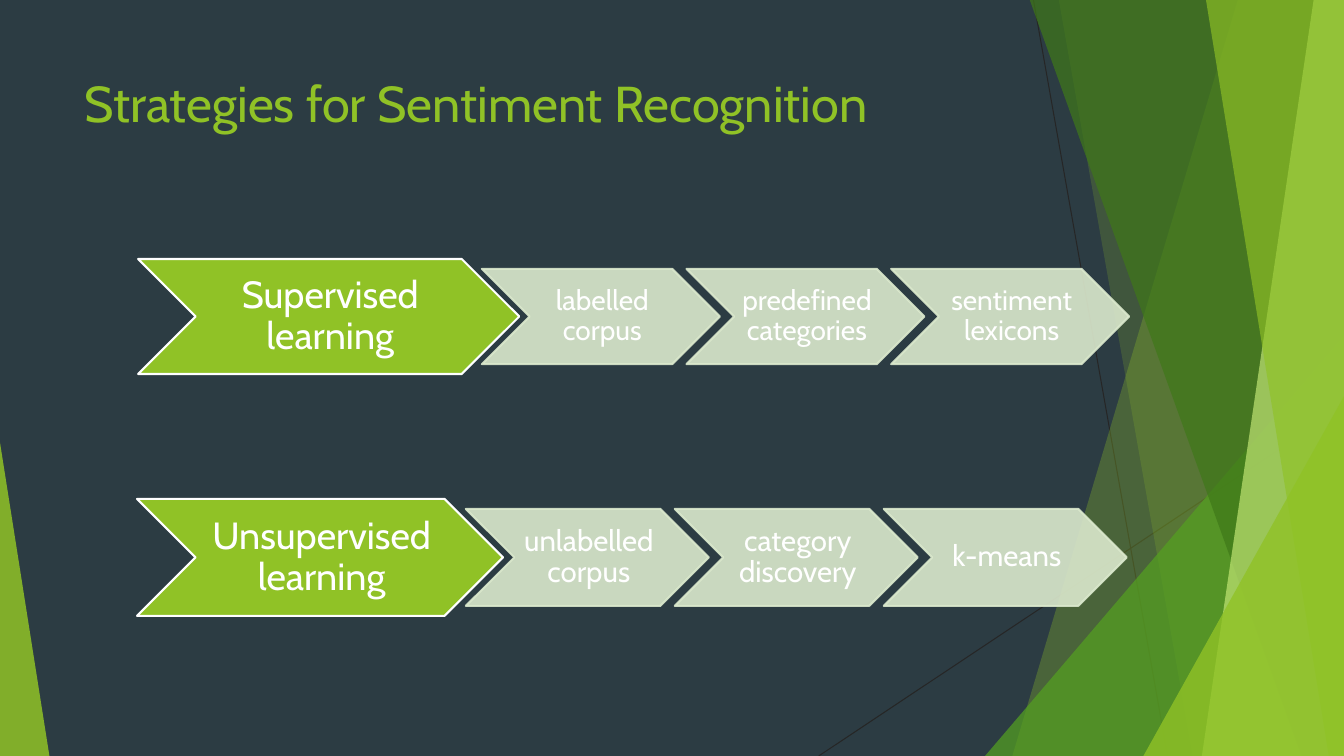
import dataclasses
import typing

import pptx
import pptx.dml.color
import pptx.enum.shapes
import pptx.enum.text
import pptx.oxml.ns
import pptx.oxml.xmlchemy
import pptx.util
from lxml import etree

Inches = pptx.util.Inches
Pt = pptx.util.Pt
Kind = pptx.enum.shapes.MSO_SHAPE
Align = pptx.enum.text.PP_ALIGN
Anchor = pptx.enum.text.MSO_ANCHOR
qn = pptx.oxml.ns.qn


@dataclasses.dataclass(frozen=True)
class Theme:
    font: str = "Cabin"
    back: str = "2C3C43"
    lime: str = "90C226"
    leaf: str = "54A021"
    moss: str = "3F7819"
    pale: str = "C0E474"
    mist: str = "DBE9CD"
    ink: str = "262626"
    white: str = "FFFFFF"
    title: int = 36
    lead: int = 27
    hair: float = 0.75
    edge: float = 1.5


@dataclasses.dataclass(frozen=True)
class Band:
    top: tuple[float, float]
    base: tuple[float, float]
    color: str
    alpha: int


@dataclasses.dataclass(frozen=True)
class Peak:
    left: float
    top: float
    width: float
    tip: float
    color: str
    alpha: int


@dataclasses.dataclass(frozen=True)
class Row:
    lead: str
    steps: tuple[str, ...]
    left: float
    top: float
    width: float
    height: float
    start: float
    step: float
    size: int


THEME = Theme()
WIDE, HIGH = 13.33, 7.5
LINES = [(10.25, 0, 11.58, HIGH), (WIDE, 4.03, 8.12, HIGH)]
DECOR = [
    Band((12.28, WIDE), (10.04, WIDE), THEME.lime, 30),
    Band((10.5, WIDE), (11.83, WIDE), THEME.lime, 20),
    Peak(9.77, 3.33, 3.56, 1, THEME.leaf, 72),
    Band((10.21, WIDE), (12.91, WIDE), THEME.moss, 70),
    Band((13.03, WIDE), (11.92, WIDE), THEME.pale, 70),
    Band((11.96, WIDE), (13.18, WIDE), THEME.lime, 65),
    Peak(11.34, 3.93, 1.99, 1, THEME.lime, 80),
    Peak(0, 4.39, 0.49, 0, THEME.lime, 85),
]
ROWS = [
    Row("Supervised learning",
        ("labelled corpus", "predefined categories", "sentiment lexicons"),
        1.37, 2.57, 3.78, 1.14, 4.78, 2.36, 20),
    Row("Unsupervised learning",
        ("unlabelled corpus", "category discovery", "k-means"),
        1.36, 4.95, 3.63, 1.16, 4.62, 2.41, 21),
]
STEP_PITCH = 0.86
STEP_SCALE = 0.83


def tint(code: str) -> pptx.dml.color.RGBColor:
    return pptx.dml.color.RGBColor.from_string(code)


def paint(shape: typing.Any, color: str, alpha: int = 100, edge: str = "") -> None:
    shape.shadow.inherit = False
    shape.fill.solid()
    shape.fill.fore_color.rgb = tint(color)
    if edge:
        shape.line.color.rgb = tint(edge)
        shape.line.width = Pt(THEME.edge)
    else:
        shape.line.fill.background()
    if alpha < 100:
        for node in shape._element.spPr.iter(qn("a:srgbClr")):
            etree.SubElement(node, qn("a:alpha")).set("val", str(alpha * 1000))


def write(shape: typing.Any, text: str, size: int, color: str) -> typing.Any:
    frame = shape.text_frame
    frame.word_wrap = True
    frame.text = text
    line = frame.paragraphs[0]
    font = line.runs[0].font
    font.name, font.size = THEME.font, Pt(size)
    font.color.rgb = tint(color)
    return frame


def draw_line(slide: typing.Any, ends: tuple[float, ...]) -> None:
    line = slide.shapes.add_connector(
        pptx.enum.shapes.MSO_CONNECTOR.STRAIGHT, *map(Inches, ends))
    line.line.color.rgb = tint(THEME.ink)
    line.line.width = Pt(THEME.hair)
    etree.SubElement(line._element.spPr, qn("a:effectLst"))


def draw_decor(slide: typing.Any, item: Band | Peak) -> None:
    if isinstance(item, Band):
        (a, b), (c, d) = item.top, item.base
        spots = [(Inches(x), Inches(y)) for x, y in
                 ((a, -0.01), (b, -0.01), (d, HIGH), (c, HIGH))]
        form = slide.shapes.build_freeform(*spots[0])
        form.add_line_segments(spots[1:], close=True)
        shape = form.convert_to_shape()
    else:
        shape = slide.shapes.add_shape(
            Kind.ISOSCELES_TRIANGLE, Inches(item.left), Inches(item.top),
            Inches(item.width), Inches(HIGH - item.top))
        shape.adjustments[0] = item.tip
    paint(shape, item.color, item.alpha)


def draw_arrow(slide: typing.Any, text: str, box: tuple[float, ...], size: int,
               color: str, edge: str, alpha: int) -> None:
    shape = slide.shapes.add_shape(Kind.CHEVRON, *map(Inches, box))
    paint(shape, color, alpha, edge)
    frame = write(shape, text, size, THEME.white)
    frame.vertical_anchor = Anchor.MIDDLE
    frame.margin_left, frame.margin_right = Inches(0.03), 0
    frame.margin_top = frame.margin_bottom = Inches(0.02)
    frame.paragraphs[0].alignment = Align.CENTER
    frame.paragraphs[0].line_spacing = 0.9


def draw_row(slide: typing.Any, row: Row) -> None:
    draw_arrow(slide, row.lead, (row.left, row.top, row.width, row.height),
               THEME.lead, THEME.lime, THEME.white, 100)
    high = row.height * STEP_SCALE
    top = row.top + (row.height - high) / 2
    for i, text in enumerate(row.steps):
        left = row.start + i * row.step * STEP_PITCH
        draw_arrow(slide, text, (left, top, row.step, high),
                   row.size, THEME.mist, THEME.mist, 90)


def main() -> None:
    deck = pptx.Presentation()
    deck.slide_width, deck.slide_height = Inches(WIDE), Inches(HIGH)
    slide = deck.slides.add_slide(deck.slide_layouts[6])
    slide.background.fill.solid()
    slide.background.fill.fore_color.rgb = tint(THEME.back)
    for ends in LINES:
        draw_line(slide, ends)
    for item in DECOR:
        draw_decor(slide, item)
    title = slide.shapes.add_textbox(*map(Inches, (0.74, 0.67, 9.4, 0.81)))
    write(title, "Strategies for Sentiment Recognition", THEME.title, THEME.lime)
    for row in ROWS:
        draw_row(slide, row)
    deck.save("out.pptx")


if __name__ == "__main__":
    main()
